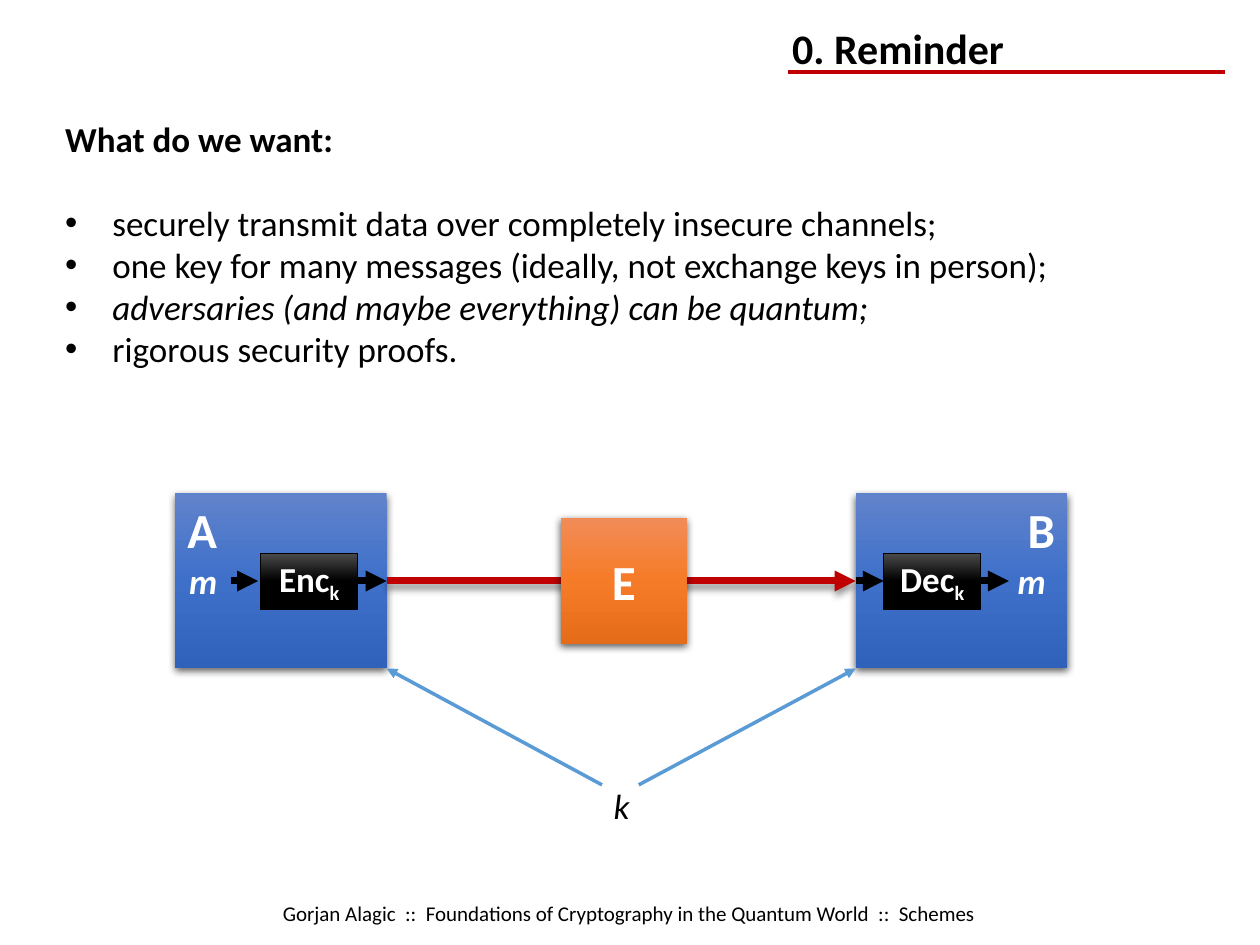
from dataclasses import dataclass

from lxml import etree
from pptx import Presentation
from pptx.dml.color import RGBColor
from pptx.enum.shapes import MSO_CONNECTOR, MSO_SHAPE
from pptx.enum.text import MSO_ANCHOR, MSO_AUTO_SIZE, PP_ALIGN
from pptx.oxml.ns import qn
from pptx.util import Pt

LEFT, CENTER, RIGHT = PP_ALIGN.LEFT, PP_ALIGN.CENTER, PP_ALIGN.RIGHT
TOP, MIDDLE = MSO_ANCHOR.TOP, MSO_ANCHOR.MIDDLE
NO_FIT = MSO_AUTO_SIZE.NONE
RECT = MSO_SHAPE.RECTANGLE
STRAIGHT = MSO_CONNECTOR.STRAIGHT
SIDE_LEFT, SIDE_RIGHT = 1, 3


@dataclass(frozen=True)
class Theme:
    font: str = "Calibri"
    black: str = "000000"
    white: str = "FFFFFF"
    red: str = "C00000"
    key_blue: str = "5B9BD5"
    party: tuple = ("6183CB", "3E70CA", "3062BB")
    eavesdropper: tuple = ("F18C57", "F67B28", "E56C19")
    cipher: tuple = ("4B4B4B", "000000", "000000")
    title: int = 24
    label: int = 28
    body: int = 20
    footer: int = 12


THEME = Theme()
PARTY_W, PARTY_H = 121, 100
CIPHER_W, CIPHER_H = 55.5, 32
A_X, B_X, AXIS_Y = 100, 489, 332
PARTY_Y = AXIS_Y - PARTY_H / 2
BULLETS = [
    ("securely transmit data over completely insecure channels;", False),
    ("one key for many messages (ideally, not exchange keys in person);", False),
    ("adversaries (and maybe everything) can be quantum;", True),
    ("rigorous security proofs.", False),
]


def add_run(p, text, size=THEME.body, color=THEME.black, bold=False,
            italic=False, baseline=0):
    r = p.add_run()
    r.text = text
    r.font.name = THEME.font
    r.font.size = Pt(size)
    r.font.bold = bold
    r.font.italic = italic
    r.font.color.rgb = RGBColor.from_string(color)
    if baseline:
        r._r.get_or_add_rPr().set("baseline", str(baseline * 1000))


def place(sp, x, y, w, h):
    sp.left, sp.top, sp.width, sp.height = Pt(x), Pt(y), Pt(w), Pt(h)


def add_label(s, text, x, y, w, h, align=LEFT, wrap=False, **fmt):
    tf = s.shapes.add_textbox(Pt(x), Pt(y), Pt(w), Pt(h)).text_frame
    tf.word_wrap = wrap
    p = tf.paragraphs[0]
    p.alignment = align
    add_run(p, text, **fmt)


def add_shadow(effects, alpha, blur, dist):
    shadow = etree.SubElement(
        effects, qn("a:outerShdw"), blurRad=str(Pt(blur)), dist=str(Pt(dist)),
        dir="5400000", rotWithShape="0")
    color = etree.SubElement(shadow, qn("a:srgbClr"), val=THEME.black)
    etree.SubElement(color, qn("a:alpha"), val=str(alpha * 1000))


def set_gradient(sp, colors):
    sp.fill.gradient()
    sp.fill.gradient_angle = 270
    stops = sp._element.spPr.find(".//" + qn("a:gsLst"))
    for stop in list(stops):
        stops.remove(stop)
    for pos, color in zip((0, 50000, 100000), colors):
        stop = etree.SubElement(stops, qn("a:gs"), pos=str(pos))
        etree.SubElement(stop, qn("a:srgbClr"), val=color)


def add_box(s, text, x, y, w, h, colors, align=CENTER, anchor=MIDDLE,
            size=THEME.label, subscript="", outlined=False):
    sp = s.shapes.add_shape(RECT, Pt(x), Pt(y), Pt(w), Pt(h))
    set_gradient(sp, colors)
    sp.shadow.inherit = False
    if outlined:
        sp.line.color.rgb = RGBColor.from_string(THEME.black)
        sp.line.width = Pt(0.5)
    else:
        sp.line.fill.background()
        add_shadow(sp._element.spPr.find(qn("a:effectLst")), 63, 4.5, 1.5)
    tf = sp.text_frame
    tf.vertical_anchor = anchor
    p = tf.paragraphs[0]
    p.alignment = align
    add_run(p, text, size=size, color=THEME.white, bold=True)
    if subscript:
        add_run(p, subscript, size=size, color=THEME.white, bold=True, baseline=-25)
    return sp


def add_cipher(s, text, x):
    return add_box(s, text, x, AXIS_Y - CIPHER_H / 2, CIPHER_W, CIPHER_H,
                   THEME.cipher, size=THEME.body, subscript="k", outlined=True)


def add_line(s, start, end, color=THEME.black, width=4, arrow=True,
             shadow=False, begin=None, finish=None):
    cx = s.shapes.add_connector(STRAIGHT, *map(Pt, start + end))
    if begin:
        cx.begin_connect(*begin)
    if finish:
        cx.end_connect(*finish)
    cx.line.color.rgb = RGBColor.from_string(color)
    cx.line.width = Pt(width)
    sppr = cx._element.spPr
    if arrow:
        etree.SubElement(sppr.find(qn("a:ln")), qn("a:tailEnd"), type="triangle")
    effects = etree.SubElement(sppr, qn("a:effectLst"))
    if shadow:
        add_shadow(effects, 40, 4, 3)


def add_title(s):
    sp = s.shapes.title
    place(sp, 445.5, 9.5, 137, 36)
    tf = sp.text_frame
    tf.word_wrap = False
    tf.auto_size = NO_FIT
    tf.vertical_anchor = TOP
    p = tf.paragraphs[0]
    p.alignment = LEFT
    add_run(p, "0. Reminder", size=THEME.title, bold=True)
    add_line(s, (700, 41), (450.5, 41), THEME.red, 2.25, arrow=False)


def add_goals(s):
    sp = s.placeholders[1]
    place(sp, 30, 63.5, 670, 152.5)
    tf = sp.text_frame
    tf.auto_size = NO_FIT
    p = tf.paragraphs[0]
    p.space_before, p.space_after = Pt(0), Pt(24)
    ppr = p._p.get_or_add_pPr()
    ppr.set("marL", "0")
    ppr.set("indent", "0")
    etree.SubElement(ppr, qn("a:buNone"))
    add_run(p, "What do we want:", bold=True)
    for text, italic in BULLETS:
        p = tf.add_paragraph()
        p.space_before = Pt(0)
        ppr = p._p.get_or_add_pPr()
        ppr.set("marL", str(Pt(27)))
        ppr.set("indent", str(-Pt(27)))
        etree.SubElement(ppr, qn("a:buChar"), char="•")
        add_run(p, text, italic=italic)


def add_channel(s):
    a_right = A_X + PARTY_W
    bottom = PARTY_Y + PARTY_H
    alice = add_box(s, "A", A_X, PARTY_Y, PARTY_W, PARTY_H, THEME.party, LEFT, TOP)
    bob = add_box(s, "B", B_X, PARTY_Y, PARTY_W, PARTY_H, THEME.party, RIGHT, TOP)
    add_line(s, (a_right, AXIS_Y), (B_X, AXIS_Y), THEME.red, shadow=True,
             begin=(alice, SIDE_RIGHT), finish=(bob, SIDE_LEFT))
    add_box(s, "E", 320.5, AXIS_Y - 36, 72, 72, THEME.eavesdropper)

    enc = add_cipher(s, "Enc", 149)
    dec = add_cipher(s, "Dec", 505)
    for x in (101, 574.5):
        add_label(s, "m", x, AXIS_Y - 16, 31, 32, color=THEME.white,
                  bold=True, italic=True)
    add_line(s, (132, AXIS_Y), (147.5, AXIS_Y))
    add_line(s, (204.5, AXIS_Y), (a_right, AXIS_Y),
             begin=(enc, SIDE_RIGHT), finish=(alice, SIDE_RIGHT))
    add_line(s, (B_X, AXIS_Y), (505, AXIS_Y),
             begin=(bob, SIDE_LEFT), finish=(dec, SIDE_LEFT))
    add_line(s, (560.5, AXIS_Y), (576.5, AXIS_Y), begin=(dec, SIDE_RIGHT))

    for start_x, corner_x in ((344, a_right), (365, B_X)):
        add_line(s, (start_x, 448.5), (corner_x, bottom), THEME.key_blue, 2)
    add_label(s, "k", 343.5, 445, 24, 32, italic=True)


def main():
    prs = Presentation()
    prs.slide_width, prs.slide_height = Pt(720), Pt(540)
    s = prs.slides.add_slide(prs.slide_layouts[1])
    add_title(s)
    add_goals(s)
    add_channel(s)
    add_label(s, "Gorjan Alagic\u00a0 ::\u00a0 Foundations of Cryptography in the Quantum World\u00a0 ::\u00a0 Schemes".replace("\u00a0", " "),
              19.5, 511, 680, 22, CENTER, True, size=THEME.footer)
    prs.save("out.pptx")


if __name__ == "__main__":
    main()
